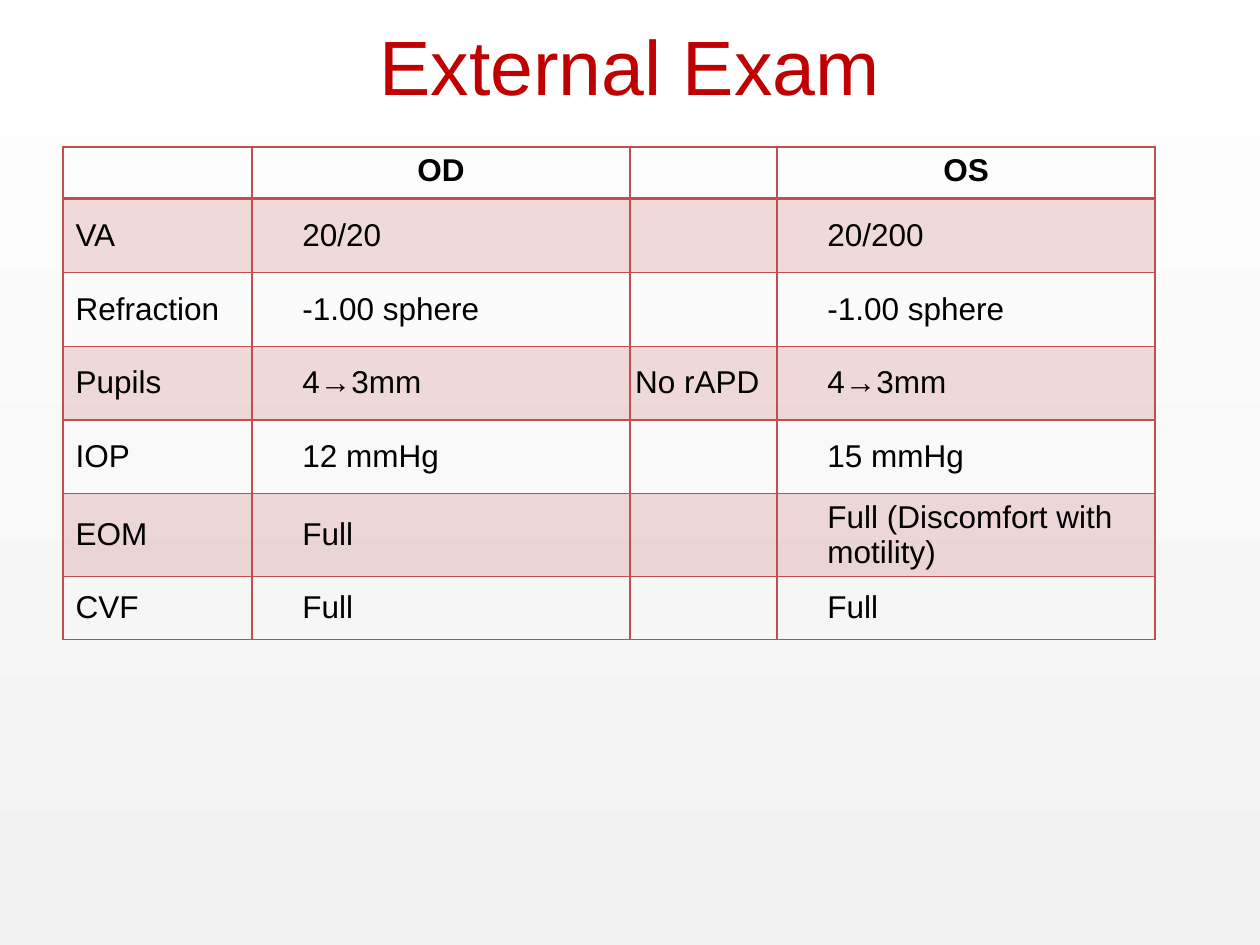
from dataclasses import dataclass

from lxml.etree import SubElement
from pptx import Presentation
from pptx.dml.color import RGBColor
from pptx.enum.shapes import MSO_SHAPE
from pptx.enum.text import MSO_ANCHOR, PP_ALIGN
from pptx.oxml import parse_xml
from pptx.oxml.ns import nsdecls, qn
from pptx.util import Inches, Pt


@dataclass(frozen=True)
class Theme:
    font: str = "Arial"
    head: int = 44
    body: int = 18
    red: str = "C00000"
    rule: str = "C0504D"
    ink: str = "000000"
    low: str = "F2F2F2"
    high: str = "FFFFFF"
    tint: int = 20


class Deck:
    """Holds the theme and current slide; lengths are percent of the slide."""

    def __init__(self, theme):
        self.theme = theme
        self.show = Presentation()
        self.show.slide_width, self.show.slide_height = Inches(10), Inches(7.5)
        self.slide = self.show.slides.add_slide(self.show.slide_layouts[6])

    def wide(self, share):
        return round(self.show.slide_width * share / 100)

    def tall(self, share):
        return round(self.show.slide_height * share / 100)

    def area(self, left, top, width, height):
        return self.wide(left), self.tall(top), self.wide(width), self.tall(height)

    def label(self, frame, text, align=None, **style):
        par = frame.paragraphs[0]
        par.alignment = align
        run = par.add_run()
        run.text = text
        look = {"name": self.theme.font, "size": Pt(self.theme.body), "bold": False}
        color = style.pop("color", self.theme.ink)
        for key, value in (look | style).items():
            setattr(run.font, key, value)
        run.font.color.rgb = RGBColor.from_string(color)

    def backdrop(self):
        box = self.slide.shapes.add_shape(MSO_SHAPE.RECTANGLE, *self.area(0, 0, 100, 100))
        box.shadow.inherit = False
        box.line.fill.background()
        box.fill.gradient()
        box.fill.gradient_angle = 90
        for stop, tone in zip(box.fill.gradient_stops, (self.theme.low, self.theme.high)):
            stop.color.rgb = RGBColor.from_string(tone)

    def title(self, text, *area):
        frame = self.slide.shapes.add_textbox(*self.area(*area)).text_frame
        frame.word_wrap = True
        frame.vertical_anchor = MSO_ANCHOR.MIDDLE
        self.label(frame, text, PP_ALIGN.CENTER,
                   size=Pt(self.theme.head), color=self.theme.red)

    def shade(self, cell):
        """Fill the cell with a see-through tint."""
        cell.fill.solid()
        cell.fill.fore_color.rgb = RGBColor.from_string(self.theme.rule)
        tone = cell.fill._xPr.find(".//" + qn("a:srgbClr"))
        SubElement(tone, qn("a:alpha"), val=str(self.theme.tint * 1000))

    def border(self, cell, **widths):
        """Rule the four sides, one point wide unless a width is named."""
        props = cell._tc.get_or_add_tcPr()
        for spot, side in enumerate("LRTB"):
            props.insert(spot, parse_xml(
                f'<a:ln{side} {nsdecls("a")} w="{Pt(widths.get(side, 1))}"><a:solidFill>'
                f'<a:srgbClr val="{self.theme.rule}"/></a:solidFill></a:ln{side}>'))

    def table(self, left, top, cols, rows, data):
        area = self.area(left, top, sum(cols), sum(rows))
        grid = self.slide.shapes.add_table(len(rows), len(cols), *area).table
        grid.first_row = grid.horz_banding = False
        for col, share in zip(grid.columns, cols):
            col.width = self.wide(share)
        for y, (row, share, texts) in enumerate(zip(grid.rows, rows, data)):
            row.height = self.tall(share)
            for x, (cell, text) in enumerate(zip(row.cells, texts)):
                self.cell(cell, x, y, text)

    def cell(self, cell, x, y, text):
        head = y == 0
        if y % 2:
            self.shade(cell)
        else:
            cell.fill.background()
        self.border(cell, **({"B": 2} if head else {"T": 2} if y == 1 else {}))
        if not head:
            cell.vertical_anchor = MSO_ANCHOR.MIDDLE
            cell.margin_left = Inches((0.1, 0.4, 0, 0.4)[x])
        if text:
            align = PP_ALIGN.CENTER if head or x == 2 else None
            self.label(cell.text_frame, text, align, bold=head)
        else:
            cell.text_frame.paragraphs[0].font.size = Pt(self.theme.body)


EXAM = (
    ("", "OD", "", "OS"),
    ("VA", "20/20", "", "20/200"),
    ("Refraction", "-1.00 sphere", "", "-1.00 sphere"),
    ("Pupils", "4→3mm", "No rAPD", "4→3mm"),
    ("IOP", "12 mmHg", "", "15 mmHg"),
    ("EOM", "Full", "", "Full (Discomfort with motility)"),
    ("CVF", "Full", "", "Full"),
)


def main():
    deck = Deck(Theme())
    deck.backdrop()
    deck.table(5, 15.56, (15, 30, 11.67, 30), (5.4, 7.9, *[7.78] * 4, 6.67), EXAM)
    deck.title("External Exam", 5, -1.5, 90, 16.67)
    deck.show.save("out.pptx")


if __name__ == "__main__":
    main()
